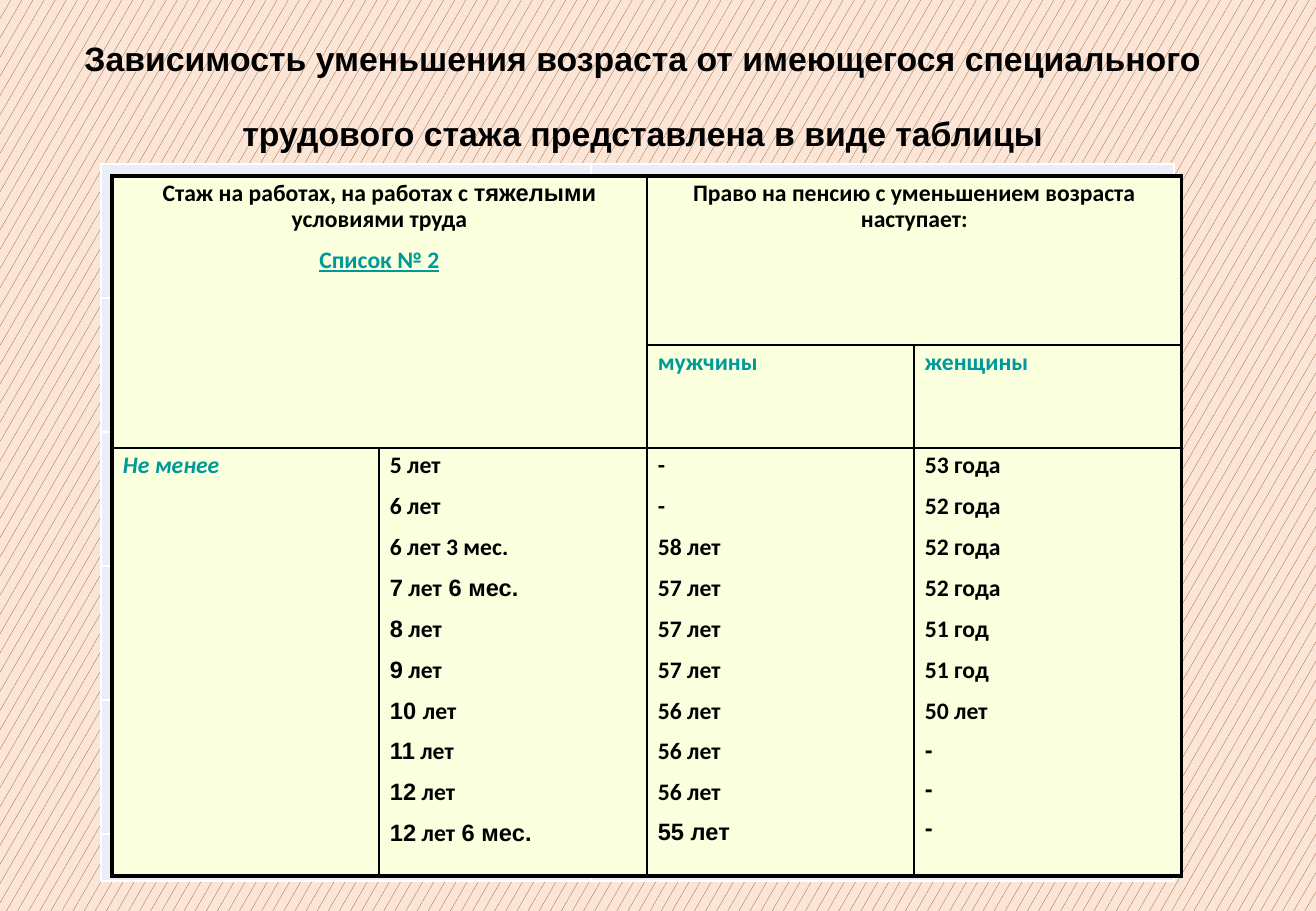
from lxml import etree
from pptx import Presentation
from pptx import util as u
from pptx.dml import color
from pptx.enum import dml, text
from pptx.oxml import ns

EMU_PER_PX = 7526
BLACK = "000000"
TEAL = "009999"


def px(length):
    return u.Emu(length * EMU_PER_PX)


def rgb(value):
    return color.RGBColor.from_string(value)


class SlideBuilder:
    body_font = "Calibri"
    accent_font = "Arial"
    title_size = 20
    cell_size = 14

    def __init__(self, presentation):
        self.slide = presentation.slides.add_slide(presentation.slide_layouts[5])

    def background(self, fore, back):
        fill = self.slide.background.fill
        fill.patterned()
        fill.pattern = dml.MSO_PATTERN.SMALL_CONFETTI
        fill.fore_color.rgb = rgb(fore)
        fill.back_color.rgb = rgb(back)

    def style(self, run, font, size, hue, italic=False, underline=False):
        run.font.name = font
        run.font.size = u.Pt(size)
        run.font.bold = True
        run.font.italic = italic
        run.font.underline = underline
        run.font.color.rgb = rgb(hue)

    def title(self, lines, left, top, width, height):
        shape = self.slide.shapes.title
        shape.left, shape.top = px(left), px(top)
        shape.width, shape.height = px(width), px(height)
        frame = shape.text_frame
        frame.text = "\n".join(lines)
        frame.word_wrap = True
        frame.auto_size = text.MSO_AUTO_SIZE.NONE
        frame.vertical_anchor = text.MSO_ANCHOR.MIDDLE
        for index, paragraph in enumerate(frame.paragraphs):
            paragraph.alignment = text.PP_ALIGN.CENTER
            paragraph.line_spacing = 1.0
            paragraph.space_before = u.Pt(20 if index else 0)
            for run in paragraph.runs:
                self.style(run, self.accent_font, self.title_size, BLACK)

    def table(self, left, top, columns, rows, fill):
        frame = self.slide.shapes.add_table(
            len(rows), len(columns), px(left), px(top), px(sum(columns)), px(sum(rows)))
        table = frame.table
        table.first_row = table.horz_banding = False
        for column, width in zip(table.columns, columns):
            column.width = px(width)
        for row, height in zip(table.rows, rows):
            row.height = px(height)
        for cell in table.iter_cells():
            cell.fill.solid()
            cell.fill.fore_color.rgb = rgb(fill)
            cell.margin_left = cell.margin_right = px(11)
            cell.margin_top = cell.margin_bottom = px(5)
        return table

    def borders(self, table, hue, inner, outer):
        last_column, last_row = len(table.columns), len(table.rows)
        for row in range(last_row):
            for column in range(last_column):
                cell = table.cell(row, column)
                if cell.is_spanned:
                    continue
                span_width = cell.span_width if cell.is_merge_origin else 1
                span_height = cell.span_height if cell.is_merge_origin else 1
                on_edge = {
                    "a:lnL": column == 0,
                    "a:lnR": column + span_width == last_column,
                    "a:lnT": row == 0,
                    "a:lnB": row + span_height == last_row,
                }
                properties = cell._tc.get_or_add_tcPr()
                for index, (tag, is_outer) in enumerate(on_edge.items()):
                    line = etree.Element(ns.qn(tag), w=str(u.Pt(outer if is_outer else inner)))
                    solid = etree.SubElement(line, ns.qn("a:solidFill"))
                    etree.SubElement(solid, ns.qn("a:srgbClr"), val=hue)
                    properties.insert(index, line)

    def cell_text(self, cell, lines, hue=BLACK, centered=False, italic=False, underlined=None):
        frame = cell.text_frame
        frame.text = "\n".join(line.replace("|", "") for line in lines)
        for paragraph, line in zip(frame.paragraphs, lines):
            paragraph.alignment = text.PP_ALIGN.CENTER if centered else text.PP_ALIGN.LEFT
            paragraph.line_spacing = 0.9
            paragraph.space_before = u.Pt(8.9)
            paragraph.clear()
            is_link = line == underlined
            for index, part in enumerate(line.split("|")):
                if part:
                    run = paragraph.add_run()
                    run.text = part
                    font = self.accent_font if index % 2 else self.body_font
                    self.style(run, font, self.cell_size, TEAL if is_link else hue, italic, is_link)


def main():
    presentation = Presentation()
    presentation.slide_width, presentation.slide_height = px(1316), px(911)
    builder = SlideBuilder(presentation)
    builder.background("843C0B", "FBE5D6")
    builder.title(
        ["Зависимость уменьшения возраста от имеющегося специального",
         "трудового стажа представлена в виде таблицы"],
        67, 22, 1152, 147)

    backdrop = builder.table(101, 164, [490, 583], [134] * 5 + [43], "EAEFF7")
    builder.borders(backdrop, "FFFFFF", 1, 1)

    pension = builder.table(112, 176, [267, 268, 267, 268], [169, 103, 428], "FAFFDD")
    pension.cell(0, 0).merge(pension.cell(1, 1))
    pension.cell(0, 2).merge(pension.cell(0, 3))
    builder.borders(pension, BLACK, 1, 2.25)

    list_name = "Список № 2"
    builder.cell_text(
        pension.cell(0, 0),
        ["Стаж на работах, на работах с |тяжелыми| условиями труда", list_name],
        centered=True, underlined=list_name)
    builder.cell_text(
        pension.cell(0, 2), ["Право на пенсию с уменьшением возраста наступает:"], centered=True)
    builder.cell_text(pension.cell(1, 2), ["мужчины"], TEAL)
    builder.cell_text(pension.cell(1, 3), ["женщины"], TEAL)
    builder.cell_text(pension.cell(2, 0), ["Не менее"], TEAL, italic=True)

    service = ["5 лет", "6 лет", "6 лет 3 мес.", "|7| лет| 6 мес.", "|8| лет", "|9| лет",
               "|10 |лет", "|11| лет", "|12| лет", "|12| лет| 6 мес."]
    men = ["-", "-", "58 лет", "57 лет", "57 лет", "57 лет",
           "56 лет", "56 лет", "56 лет", "|55 лет"]
    women = ["53 года", "52 года", "52 года", "52 года", "51 год", "51 год",
             "50 лет", "|-", "|-", "|-"]
    for column, lines in enumerate([service, men, women], start=1):
        builder.cell_text(pension.cell(2, column), lines)

    presentation.save("out.pptx")


if __name__ == "__main__":
    main()
